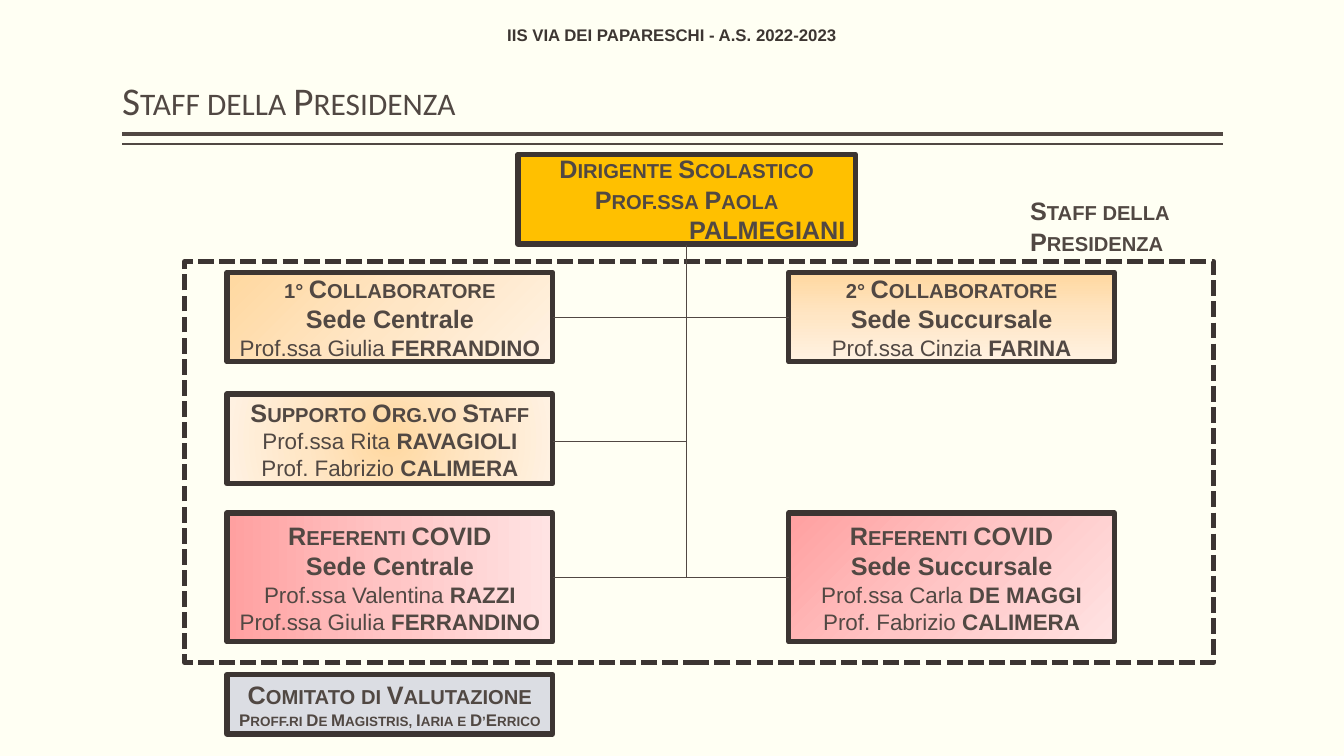
from pptx import Presentation
from pptx.dml.color import RGBColor
from pptx.enum.dml import MSO_LINE
from pptx.enum.shapes import MSO_CONNECTOR, MSO_SHAPE
from pptx.enum.text import MSO_ANCHOR, PP_ALIGN
from pptx.oxml import parse_xml
from pptx.oxml.ns import nsdecls, qn
from pptx.util import Pt

RECT = MSO_SHAPE.RECTANGLE
STRAIGHT = MSO_CONNECTOR.STRAIGHT
DASH = MSO_LINE.SQUARE_DOT
LEFT, MID, RIGHT = PP_ALIGN.LEFT, PP_ALIGN.CENTER, PP_ALIGN.RIGHT
CENTER, BOTTOM = MSO_ANCHOR.MIDDLE, MSO_ANCHOR.BOTTOM

INK, EDGE = "514843", "3C3532"
ORANGE = ("FFD8A0", "FFE6C5", "FFF2E3")
PINK = ("FFA0A0", "FFC5C5", "FFE3E3")

# Card columns and the trunk between them
COL1, COL2, WIDTH = 162.25, 563.5, 232.5
TRUNK = 490.3

# Line kinds: size, small caps, alignment
KINDS = {
    "head": (18, True, MID),
    "end": (18, False, RIGHT),
    "site": (18, False, MID),
    "name": (16, False, MID),
    "note": (12, True, MID),
}


def color(code):
    return RGBColor.from_string(code)


def write(para, text, size, small=False, align=LEFT, bold=True,
          face="Arial", ink=INK):
    """Fill a paragraph; text after a bar is a bold surname."""
    para.alignment = align
    font = para.font
    font.name, font.size = face, Pt(size)
    font.color.rgb = color(ink)
    first, bar, last = text.partition("|")
    if not bar:
        font.bold = bold
    for part in filter(None, (first, last)):
        run = para.add_run()
        run.text = part
        if bar:
            run.font.bold = part is last
        if small:
            run._r.get_or_add_rPr().set("cap", "small")


def blend(shape, stops, angle):
    """Three-stop gradient; an angle of None is radial."""
    marks = "".join(
        f'<a:gs pos="{i * 50000}"><a:srgbClr val="{code}"/></a:gs>'
        for i, code in enumerate(stops))
    if angle is None:
        way = ('<a:path path="circle"><a:fillToRect l="50000" t="50000" '
               'r="50000" b="50000"/></a:path>')
    else:
        way = f'<a:lin ang="{angle * 60000}" scaled="0"/>'
    shape.fill.gradient()
    props = shape._element.spPr
    props.replace(props.find(qn("a:gradFill")), parse_xml(
        f'<a:gradFill {nsdecls("a")} rotWithShape="1">'
        f'<a:gsLst>{marks}</a:gsLst>{way}</a:gradFill>'))


def frame(slide, box):
    shape = slide.shapes.add_shape(RECT, *map(Pt, box))
    shape.shadow.inherit = False
    shape.line.color.rgb = color(EDGE)
    shape.line.width = Pt(3.78)
    return shape


def card(slide, box, paint, lines, angle=None):
    shape = frame(slide, box)
    if isinstance(paint, tuple):
        blend(shape, paint, angle)
    else:
        shape.fill.solid()
        shape.fill.fore_color.rgb = color(paint)
    body = shape.text_frame
    body.word_wrap = True
    body.vertical_anchor = CENTER
    for i, (kind, text) in enumerate(lines):
        para = body.add_paragraph() if i else body.paragraphs[0]
        size, small, align = KINDS[kind]
        write(para, text, size, small, align)


def label(slide, box, text, size, **look):
    body = slide.shapes.add_textbox(*map(Pt, box)).text_frame
    body.word_wrap = True
    write(body.paragraphs[0], text, size, **look)
    return body


def rule(slide, x1, y1, x2, y2, width):
    line = slide.shapes.add_connector(STRAIGHT, *map(Pt, (x1, y1, x2, y2)))
    line.line.color.rgb = color(INK)
    line.line.width = Pt(width)
    line._element.spPr.append(parse_xml(f'<a:effectLst {nsdecls("a")}/>'))


def title(slide, text):
    shape = slide.shapes.title
    shape.left, shape.top = Pt(87.25), Pt(5.75)
    shape.width, shape.height = Pt(786), Pt(86.5)
    body = shape.text_frame
    body.margin_left = body.margin_right = 0
    body.vertical_anchor = BOTTOM
    para = body.paragraphs[0]
    para.line_spacing = 0.9
    write(para, text, 28, small=True, bold=False, face="Calibri")


def main():
    deck = Presentation()
    deck.slide_width, deck.slide_height = Pt(960), Pt(540)
    slide = deck.slides.add_slide(deck.slide_layouts[5])
    slide.background.fill.solid()
    slide.background.fill.fore_color.rgb = color("FFFFF3")

    # Heading
    for y, width in ((95.75, 3), (102.75, 1)):
        rule(slide, 87.25, y, 873.25, y, width)
    title(slide, "Staff della Presidenza")
    head = label(slide, (0, 10.75, 960, 28.75),
                 "IIS VIA DEI PAPARESCHI - A.S. 2022-2023", 12,
                 align=MID, ink="3D3632")
    head.vertical_anchor = CENTER

    # Head teacher
    card(slide, (370, 110.25, 241, 64), "FFC000", [
        ("head", "Dirigente Scolastico"),
        ("head", "Prof.ssa Paola"),
        ("end", "PALMEGIANI")])

    # Staff cards
    card(slide, (COL1, 194.5, WIDTH, 64), ORANGE, [
        ("head", "1° Collaboratore"),
        ("site", "Sede Centrale"),
        ("name", "Prof.ssa Giulia |FERRANDINO")], 45)
    card(slide, (COL1, 281.5, WIDTH, 64), ORANGE, [
        ("head", "Supporto Org.vo Staff"),
        ("name", "Prof.ssa Rita |RAVAGIOLI"),
        ("name", "Prof. Fabrizio |CALIMERA")])
    card(slide, (COL1, 366.5, WIDTH, 92), PINK, [
        ("head", "Referenti COVID"),
        ("site", "Sede Centrale"),
        ("name", "Prof.ssa Valentina |RAZZI"),
        ("name", "Prof.ssa Giulia |FERRANDINO")], 0)
    card(slide, (COL2, 366.5, WIDTH, 92), PINK, [
        ("head", "Referenti COVID"),
        ("site", "Sede Succursale"),
        ("name", "Prof.ssa Carla |DE MAGGI"),
        ("name", "Prof. Fabrizio |CALIMERA")], 45)
    card(slide, (COL2, 194.5, WIDTH, 64), ORANGE, [
        ("head", "2° Collaboratore"),
        ("site", "Sede Succursale"),
        ("name", "Prof.ssa Cinzia |FARINA")], 90)

    # Dashed staff border and its label
    border = frame(slide, (132, 186.75, 735, 286.5))
    border.fill.background()
    border.line.dash_style = DASH
    label(slide, (728.75, 136.25, 195.75, 51), "Staff della Presidenza", 18,
          small=True)

    # Trunk and branches
    rule(slide, TRUNK, 174.75, TRUNK, 412.5, 0.5)
    for y, end in ((226.75, COL2), (315, TRUNK), (412.5, COL2)):
        rule(slide, COL1 + WIDTH, y, end, y, 0.5)

    # Committee
    card(slide, (COL1, 481.75, WIDTH, 42.5), "DBDDE3", [
        ("head", "Comitato di Valutazione"),
        ("note", "Proff.ri De Magistris, Iaria e D’Errico")])

    deck.save("out.pptx")


if __name__ == "__main__":
    main()
